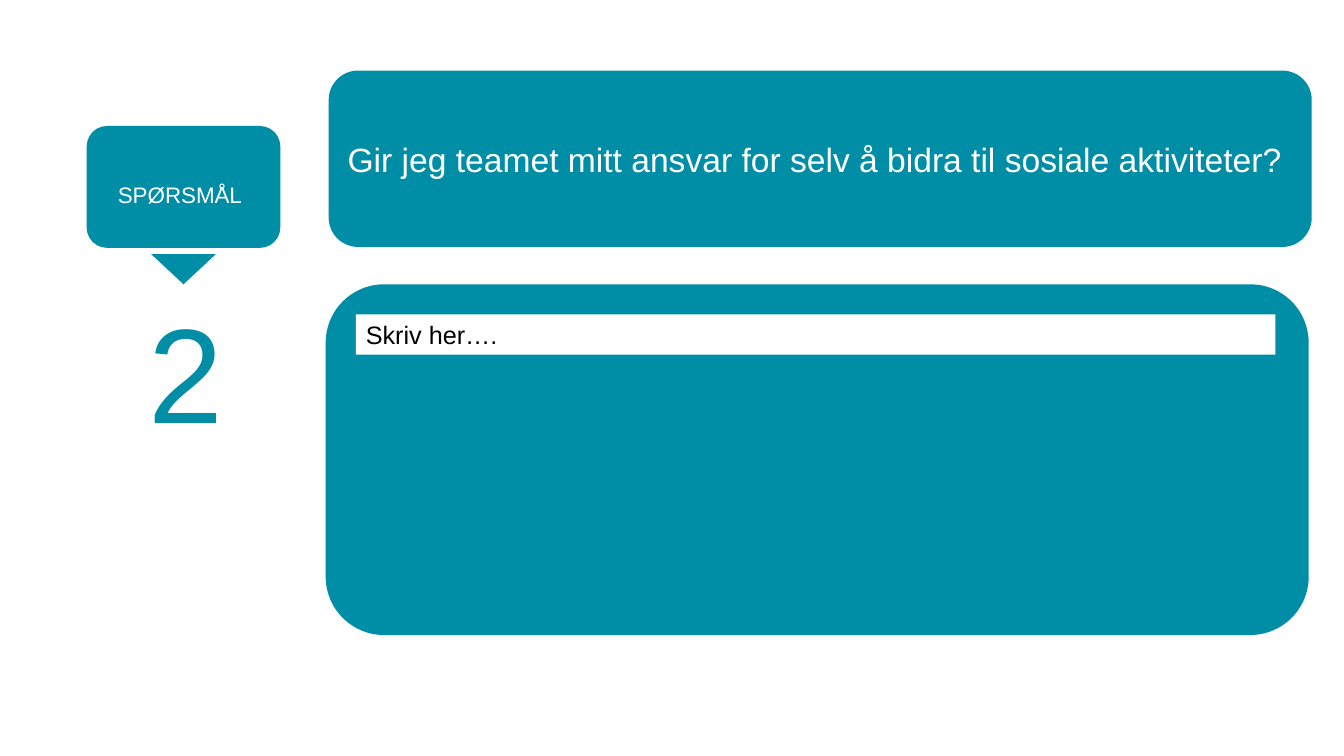
from pptx import Presentation
from pptx.dml.color import RGBColor
from pptx.enum.shapes import MSO_SHAPE as Shape
from pptx.enum.text import MSO_ANCHOR as Anchor, MSO_AUTO_SIZE as Fit, PP_ALIGN as Align
from pptx.util import Inches, Pt

TEAL = RGBColor(0x00, 0x8E, 0xA6)
WHITE = RGBColor(0xFF, 0xFF, 0xFF)
BLACK = RGBColor(0x00, 0x00, 0x00)
WIDTH, HEIGHT = 13.33, 7.5


def add_block(slide, kind, box, color=TEAL):
    block = slide.shapes.add_shape(kind, *map(Inches, box))
    block.shadow.inherit = False
    block.fill.solid()
    block.fill.fore_color.rgb = color
    block.line.fill.background()
    return block


def write(shape, text, size, color, align=Align.LEFT, anchor=Anchor.TOP):
    frame = shape.text_frame
    frame.word_wrap = True
    frame.auto_size = Fit.NONE
    frame.vertical_anchor = anchor
    frame.text = text
    line = frame.paragraphs[0]
    line.alignment = align
    line.font.name = "Arial"
    line.font.size = Pt(size)
    line.font.color.rgb = color


def add_text(slide, box, *args):
    write(slide.shapes.add_textbox(*map(Inches, box)), *args)


def add_marker(slide, box, label, number):
    """Label card with a pointer below it, leading to the question number."""
    left, top, width, height = box
    card = 0.77 * height
    add_block(slide, Shape.ROUNDED_RECTANGLE, (left, top, width, card))
    tip = width / 3
    drop = 0.19 * height
    pointer = add_block(slide, Shape.ISOSCELES_TRIANGLE,
                        (left + tip, top + height - drop, tip, drop))
    pointer.rotation = 180
    add_text(slide, (left, top + 0.14, width - 0.07, 0.9 * card),
             label, 16, WHITE, Align.CENTER, Anchor.MIDDLE)
    add_text(slide, (left + 0.51, top + height, 0.94, 1.72), number, 96, TEAL)


def add_question(slide, box, text):
    left, top, width, height = box
    add_block(slide, Shape.ROUNDED_RECTANGLE, box)
    title = slide.shapes.title
    inset = 0.05 * height
    title.left, title.top = Inches(left + inset), Inches(top)
    title.width, title.height = Inches(width - 2 * inset), Inches(height)
    write(title, text, 24, WHITE, anchor=Anchor.MIDDLE)
    # The title stacks above its panel
    slide.shapes._spTree.append(title._element)


def add_answer(slide, box, prompt):
    left, top, width, height = box
    add_block(slide, Shape.ROUNDED_RECTANGLE, box)
    pad = 0.3
    field = add_block(slide, Shape.RECTANGLE,
                      (left + pad, top + pad, width - 2.1 * pad, 0.4), WHITE)
    write(field, prompt, 18, BLACK)


def main():
    deck = Presentation()
    deck.slide_width, deck.slide_height = Inches(WIDTH), Inches(HEIGHT)
    slide = deck.slides.add_slide(deck.slide_layouts[5])
    add_marker(slide, (0.86, 1.25, 1.92, 1.57), "SPØRSMÅL", "2")
    add_question(slide, (3.26, 0.7, 9.75, 1.75),
                 "Gir jeg teamet mitt ansvar for selv å bidra til sosiale aktiviteter?")
    add_answer(slide, (3.23, 2.82, 9.75, 3.48), "Skriv her….")
    deck.save("out.pptx")


if __name__ == "__main__":
    main()
